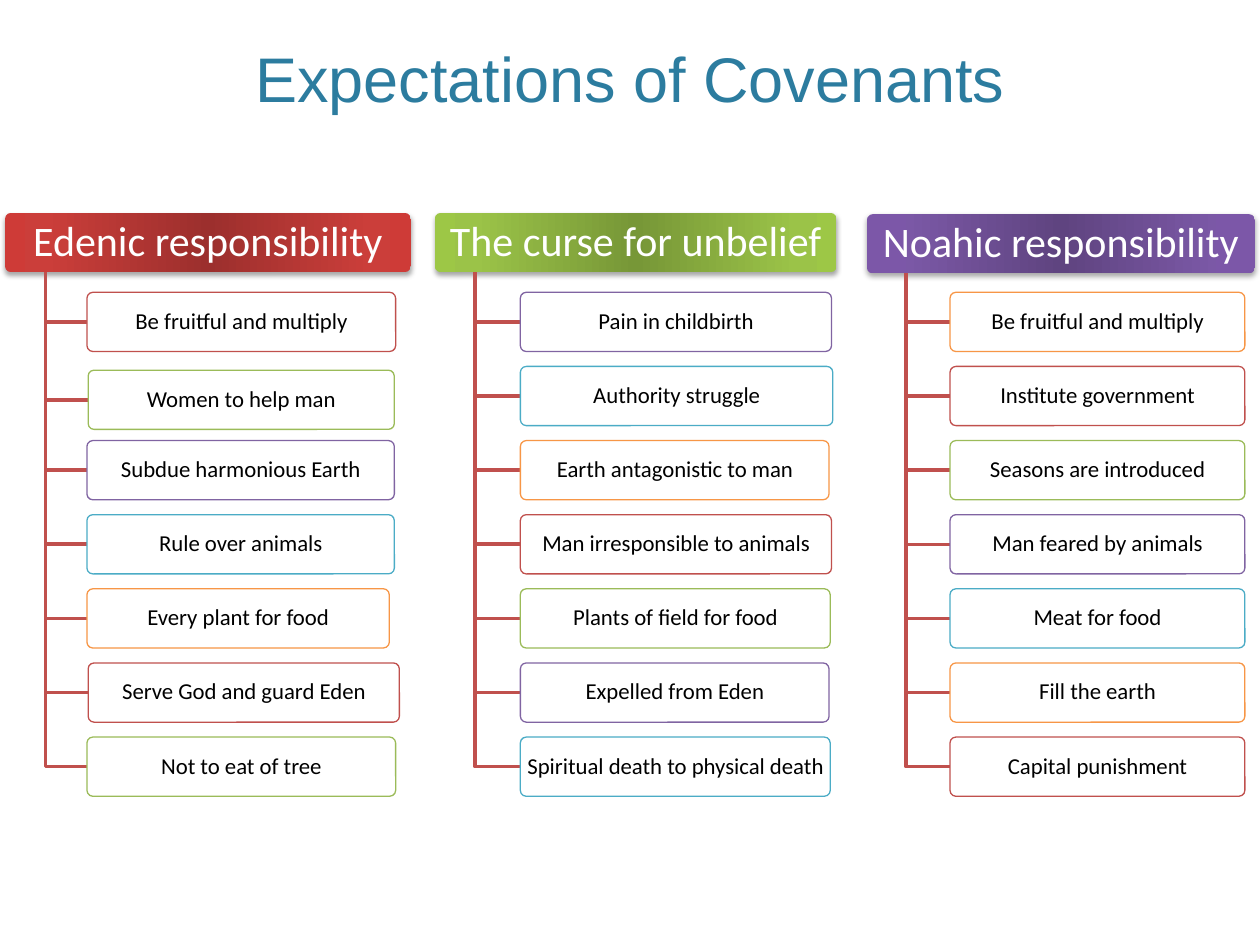
from dataclasses import dataclass
from itertools import count

from lxml.etree import SubElement
from pptx import Presentation
from pptx.dml.color import RGBColor
from pptx.enum.shapes import MSO_SHAPE as Shape
from pptx.enum.text import MSO_ANCHOR as Anchor, PP_ALIGN as Align
from pptx.oxml import parse_xml
from pptx.oxml.ns import nsdecls, qn
from pptx.util import Inches, Pt

TITLE = "Expectations of Covenants"

# Items are (text, box width) or (text, box width, shift right, shift down).
COLUMNS = [
    {"header": "Edenic responsibility", "at": (0.04, 1.69), "width": 3.22,
     "gradient": ("CE3B37", "CB3E3A", "9C2F2D"), "trunk": 0.36, "items_left": 0.69,
     "items": [("Be fruitful and multiply", 2.45),
               ("Women to help man", 2.43, 0.01, 0.03),
               ("Subdue harmonious Earth", 2.44),
               ("Rule over animals", 2.44),
               ("Every plant for food", 2.40),
               ("Serve God and guard Eden", 2.47, 0.01, 0.0),
               ("Not to eat of tree", 2.45)]},
    {"header": "The curse for unbelief", "at": (3.45, 1.69), "width": 3.19,
     "gradient": ("9DC746", "9BC348", "779737"), "trunk": 3.77, "items_left": 4.13,
     "items": [("Pain in childbirth", 2.47),
               ("Authority struggle", 2.48),
               ("Earth antagonistic to man", 2.45),
               ("Man irresponsible to animals", 2.47),
               ("Plants of field for food", 2.46),
               ("Expelled from Eden", 2.45),
               ("Spiritual death to physical death", 2.46)]},
    {"header": "Noahic responsibility", "at": (6.88, 1.70), "width": 3.08,
     "gradient": ("7C57A8", "7B58A6", "5F4480"), "trunk": 7.19, "items_left": 7.54,
     "items": [("Be fruitful and multiply", 2.34),
               ("Institute government", 2.34),
               ("Seasons are introduced", 2.34),
               ("Man feared by animals", 2.34),
               ("Meat for food", 2.34),
               ("Fill the earth", 2.34),
               ("Capital punishment", 2.34)]},
]


@dataclass(frozen=True)
class Theme:
    title_font: str = "Arial"
    body_font: str = "Calibri"
    title_size: int = 36
    header_size: int = 24
    item_size: int = 13
    title: str = "2C7C9F"
    white: str = "FFFFFF"
    black: str = "000000"
    branch: str = "C0504D"
    outlines: tuple = ("C0504D", "9BBB59", "8064A2", "4BACC6", "F79646")


THEME = Theme()
BOX_HEIGHT = 0.47
FIRST_TOP, LAST_TOP = 2.32, 5.85


def color(value):
    return RGBColor.from_string(value)


def write(shape, text, *, size, fill, font=THEME.body_font, anchor=Anchor.MIDDLE,
          spacing=0.9, inset=(0.03, 0.02)):
    frame = shape.text_frame
    frame.word_wrap = True
    frame.vertical_anchor = anchor
    frame.margin_left = frame.margin_right = Inches(inset[0])
    frame.margin_top = frame.margin_bottom = Inches(inset[1])
    para = frame.paragraphs[0]
    para.alignment = Align.CENTER
    para.line_spacing = spacing
    span = para.add_run()
    span.text = text
    span.font.name, span.font.size = font, Pt(size)
    span.font.color.rgb = color(fill)


def add_box(page, left, top, width):
    box = page.shapes.add_shape(Shape.ROUNDED_RECTANGLE, Inches(left), Inches(top),
                                Inches(width), Inches(BOX_HEIGHT))
    box.adjustments[0] = 0.1
    box.shadow.inherit = False
    return box


def add_header(page, column):
    box = add_box(page, *column["at"], column["width"])
    box.line.fill.background()
    edge, middle, center = column["gradient"]
    stops = [(0, edge), (10, middle), (50, center), (90, middle), (100, edge)]
    stop_xml = "".join(f'<a:gs pos="{place * 1000}"><a:srgbClr val="{value}"/></a:gs>'
                       for place, value in stops)
    properties = box.element.spPr
    properties.find(qn("a:prstGeom")).addnext(parse_xml(
        f'<a:gradFill {nsdecls("a")} rotWithShape="1"><a:gsLst>{stop_xml}</a:gsLst>'
        '<a:lin ang="0" scaled="0"/></a:gradFill>'))
    properties.find(qn("a:effectLst")).append(parse_xml(
        f'<a:outerShdw {nsdecls("a")} blurRad="{Pt(3.1)}" dist="{Pt(1.8)}" dir="5400000" '
        f'rotWithShape="0"><a:srgbClr val="{THEME.black}"><a:alpha val="35000"/>'
        '</a:srgbClr></a:outerShdw>'))
    write(box, column["header"], size=THEME.header_size, fill=THEME.white,
          inset=(0.05, 0.03))


def add_branch(page, trunk, start, end, right):
    """Draw the bent line that runs down the trunk and across to an item."""
    builder = page.shapes.build_freeform(Inches(trunk), Inches(start))
    builder.add_line_segments([(Inches(trunk), Inches(end)), (Inches(right), Inches(end))],
                              close=False)
    branch = builder.convert_to_shape()
    branch.shadow.inherit = False
    branch.fill.background()
    branch.line.color.rgb = color(THEME.branch)
    branch.line.width = Pt(2)


def add_item(page, text, left, top, width, outline):
    box = add_box(page, left, top, width)
    box.fill.solid()
    box.fill.fore_color.rgb = color(THEME.white)
    white = box.element.spPr.find(qn("a:solidFill")).find(qn("a:srgbClr"))
    SubElement(white, qn("a:alpha")).set("val", "90000")
    box.line.color.rgb = color(outline)
    box.line.width = Pt(0.75)
    write(box, text, size=THEME.item_size, fill=THEME.black)


def add_column(page, column, order):
    add_header(page, column)
    header_bottom = column["at"][1] + BOX_HEIGHT
    step = (LAST_TOP - FIRST_TOP) / (len(column["items"]) - 1)
    for row, (text, width, *shift) in enumerate(column["items"]):
        right, down = shift or (0, 0)
        left = column["items_left"] + right
        top = FIRST_TOP + row * step + down
        add_branch(page, column["trunk"], header_bottom, top + BOX_HEIGHT / 2, left)
        outline = THEME.outlines[next(order) % len(THEME.outlines)]
        add_item(page, text, left, top, width, outline)


def main():
    deck = Presentation()
    deck.slide_width, deck.slide_height = Inches(10), Inches(7.5)
    page = deck.slides.add_slide(deck.slide_layouts[5])
    title = page.shapes.title
    title.left, title.top = Inches(0.6), Inches(0.12)
    title.width, title.height = Inches(8.8), Inches(0.84)
    write(title, TITLE, size=THEME.title_size, fill=THEME.title, font=THEME.title_font,
          anchor=Anchor.BOTTOM, spacing=1.0, inset=(0.1, 0.05))
    order = count()
    for column in COLUMNS:
        add_column(page, column, order)
    deck.save("out.pptx")


if __name__ == "__main__":
    main()
